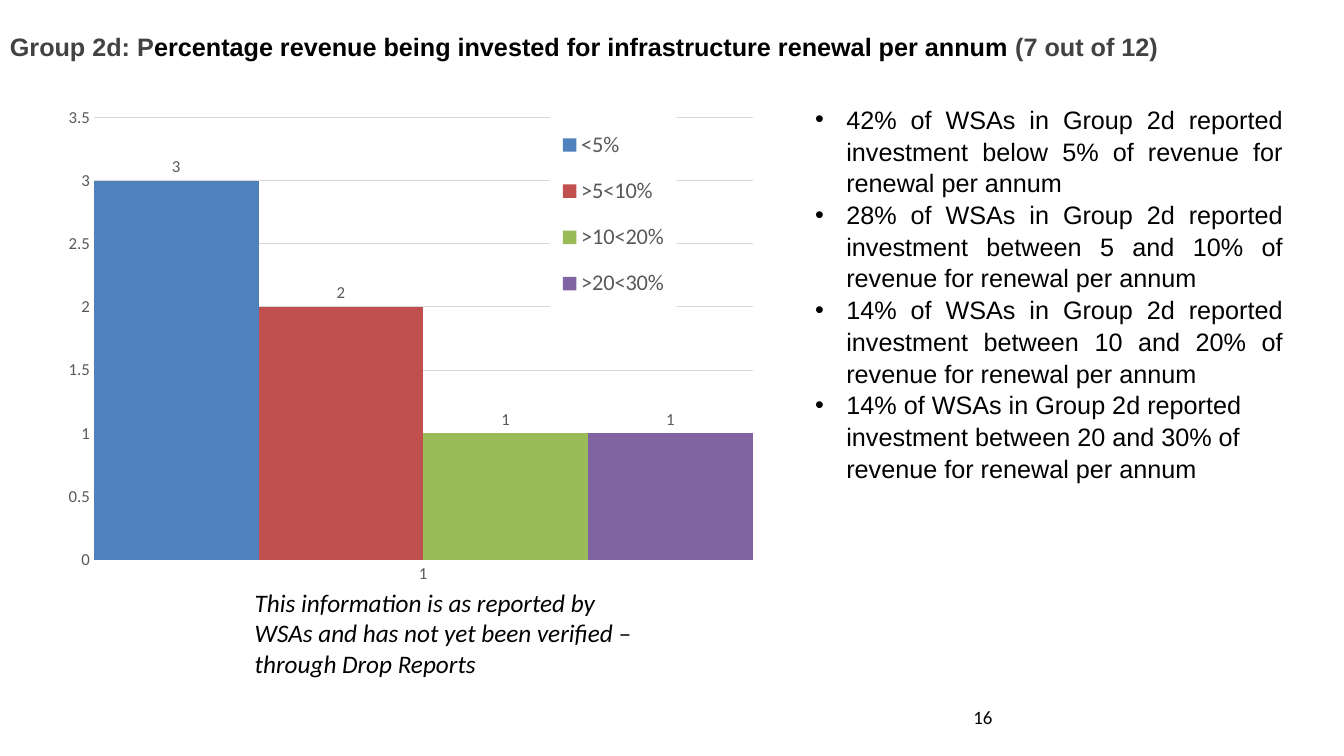
import pptx
import pptx.util
import pptx.chart.data
import pptx.dml.color
import pptx.enum.chart
import pptx.enum.text
import pptx.oxml
import pptx.oxml.ns

Cm, Pt = pptx.util.Cm, pptx.util.Pt
ALIGN = pptx.enum.text.PP_ALIGN
HUES = {
    "ink": "000000", "dark": "424242", "paper": "FFFFFF",
    "label": "595959", "grid": "D9D9D9",
    "blue": "4F81BD", "red": "C0504D", "green": "9BBB59", "violet": "8064A2",
}
BANDS = [("<5%", 3, "blue"), (">5<10%", 2, "red"),
         (">10<20%", 1, "green"), (">20<30%", 1, "violet")]
POINTS = [
    "42% of WSAs in Group 2d reported investment below 5% of revenue for renewal per annum",
    "28% of WSAs in Group 2d reported investment between 5 and 10% of revenue for renewal per annum",
    "14% of WSAs in Group 2d reported investment between 10 and 20% of revenue for renewal per annum",
    "14% of WSAs in Group 2d reported investment between 20 and 30% of revenue for renewal per annum",
]
TITLE = [("Group 2d: P", "dark"),
         ("ercentage revenue being invested for infrastructure renewal per annum ", "ink"),
         ("(7 out of 12)", "dark")]
NOTE = ("This information is as reported by WSAs and has not yet been verified –"
        "through Drop Reports")


def hue(name):
    return pptx.dml.color.RGBColor.from_string(HUES[name])


def style(font, size, face="Calibri", tint="ink", bold=False, slant=False):
    font.size, font.name = Pt(size), face
    font.bold, font.italic = bold, slant
    font.color.rgb = hue(tint)


def add_run(para, text, size, **looks):
    run = para.add_run()
    run.text = text
    style(run.font, size, **looks)


def add_frame(slide, box):
    frame = slide.shapes.add_textbox(*map(Cm, box)).text_frame
    frame.word_wrap = True
    return frame


def add_xml(tag, inner):
    space = pptx.oxml.ns.nsdecls("a", "c")
    return pptx.oxml.parse_xml(f"<{tag} {space}>{inner}</{tag}>")


def place(x, y, wide, high, inner=False):
    """Manual chart layout, in fractions of the chart box."""
    parts = '<c:layoutTarget val="inner"/>' if inner else ""
    parts += '<c:xMode val="edge"/><c:yMode val="edge"/>'
    for key, val in zip("xywh", (x, y, wide, high)):
        parts += f'<c:{key} val="{val}"/>'
    return add_xml("c:layout", f"<c:manualLayout>{parts}</c:manualLayout>")


def add_title(slide, box):
    bar = slide.shapes.add_shape(pptx.enum.shapes.MSO_SHAPE.RECTANGLE, *map(Cm, box))
    bar.shadow.inherit = False
    bar.fill.solid()
    bar.fill.fore_color.rgb = hue("paper")
    bar.line.fill.background()
    bar.text_frame.word_wrap = True
    para = bar.text_frame.paragraphs[0]
    para.alignment = ALIGN.LEFT
    for text, tint in TITLE:
        add_run(para, text, 18, face="Arial", tint=tint, bold=True)


def add_bars(slide, box):
    data = pptx.chart.data.CategoryChartData()
    data.categories = ["1"]
    for name, count, _ in BANDS:
        data.add_series(name, [count])
    kind = pptx.enum.chart.XL_CHART_TYPE.COLUMN_CLUSTERED
    chart = slide.shapes.add_chart(kind, *map(Cm, box), data).chart
    chart.has_title = False
    style(chart.font, 10)

    # Bars and their labels
    plot = chart.plots[0]
    plot.gap_width, plot.overlap, plot.vary_by_categories = 0, 0, False
    for bar, (_, _, tint) in zip(plot.series, BANDS):
        bar.format.fill.solid()
        bar.format.fill.fore_color.rgb = hue(tint)
        tags = bar.data_labels
        tags.show_value = True
        tags.position = pptx.enum.chart.XL_LABEL_POSITION.OUTSIDE_END
        style(tags.font, 12, tint="label")

    # Axes and grid
    none = pptx.enum.chart.XL_TICK_MARK.NONE
    for axis in (chart.category_axis, chart.value_axis):
        axis.major_tick_mark = axis.minor_tick_mark = none
        style(axis.tick_labels.font, 12, tint="label")
    scale = chart.value_axis
    scale.minimum_scale, scale.maximum_scale, scale.major_unit = 0, 3.5, 0.5
    scale.format.line.fill.background()
    for line in (chart.category_axis.format.line, scale.major_gridlines.format.line):
        line.color.rgb, line.width = hue("grid"), Pt(0.75)

    # Legend over the plot
    chart.has_legend = True
    key = chart.legend
    key.position = pptx.enum.chart.XL_LEGEND_POSITION.RIGHT
    key.include_in_layout = False
    style(key.font, 16, tint="label")
    find = pptx.oxml.ns.qn
    root = key._element
    for old in root.findall(find("c:layout")):
        root.remove(old)
    root.find(find("c:legendPos")).addnext(place(0.59, 0.03, 0.15, 0.41))
    paint = f'<a:solidFill><a:srgbClr val="{HUES["paper"]}"/></a:solidFill>'
    root.find(find("c:overlay")).addnext(add_xml("c:spPr", paint))

    # Plot area
    area = chart._chartSpace.chart.plotArea
    for old in area.findall(find("c:layout")):
        area.remove(old)
    area.insert(0, place(0.05, 0.04, 0.78, 0.89, inner=True))


def add_points(slide, box):
    frame = add_frame(slide, box)
    for i, text in enumerate(POINTS):
        para = frame.paragraphs[0] if i == 0 else frame.add_paragraph()
        last = i == len(POINTS) - 1
        para.alignment = ALIGN.LEFT if last else ALIGN.JUSTIFY
        para.line_spacing = 1.05
        props = para._p.get_or_add_pPr()
        props.set("marL", str(Cm(0.79)))
        props.set("indent", str(-Cm(0.79)))
        for tag, attr, val in (("a:buFont", "typeface", "Arial"), ("a:buChar", "char", "•")):
            mark = add_xml(tag, "")
            mark.set(attr, val)
            props.append(mark)
        add_run(para, text, 18, face="Arial")


def add_note(slide, box):
    add_run(add_frame(slide, box).paragraphs[0], NOTE, 18, slant=True)


def add_page(slide, box):
    add_run(add_frame(slide, box).paragraphs[0], "16", 13.5)


def main():
    deck = pptx.Presentation()
    deck.slide_width, deck.slide_height = Cm(33.87), Cm(19.05)
    slide = deck.slides.add_slide(deck.slide_layouts[6])
    add_page(slide, (24.28, 17.65, 7.9, 1.02))
    add_title(slide, (0, 0.66, 33.5, 1.02))
    add_bars(slide, (1.3, 2.46, 21.29, 12.52))
    add_points(slide, (20.29, 2.46, 12.29, 11.02))
    add_note(slide, (6.17, 14.68, 10.21, 2.57))
    deck.save("out.pptx")


if __name__ == "__main__":
    main()
